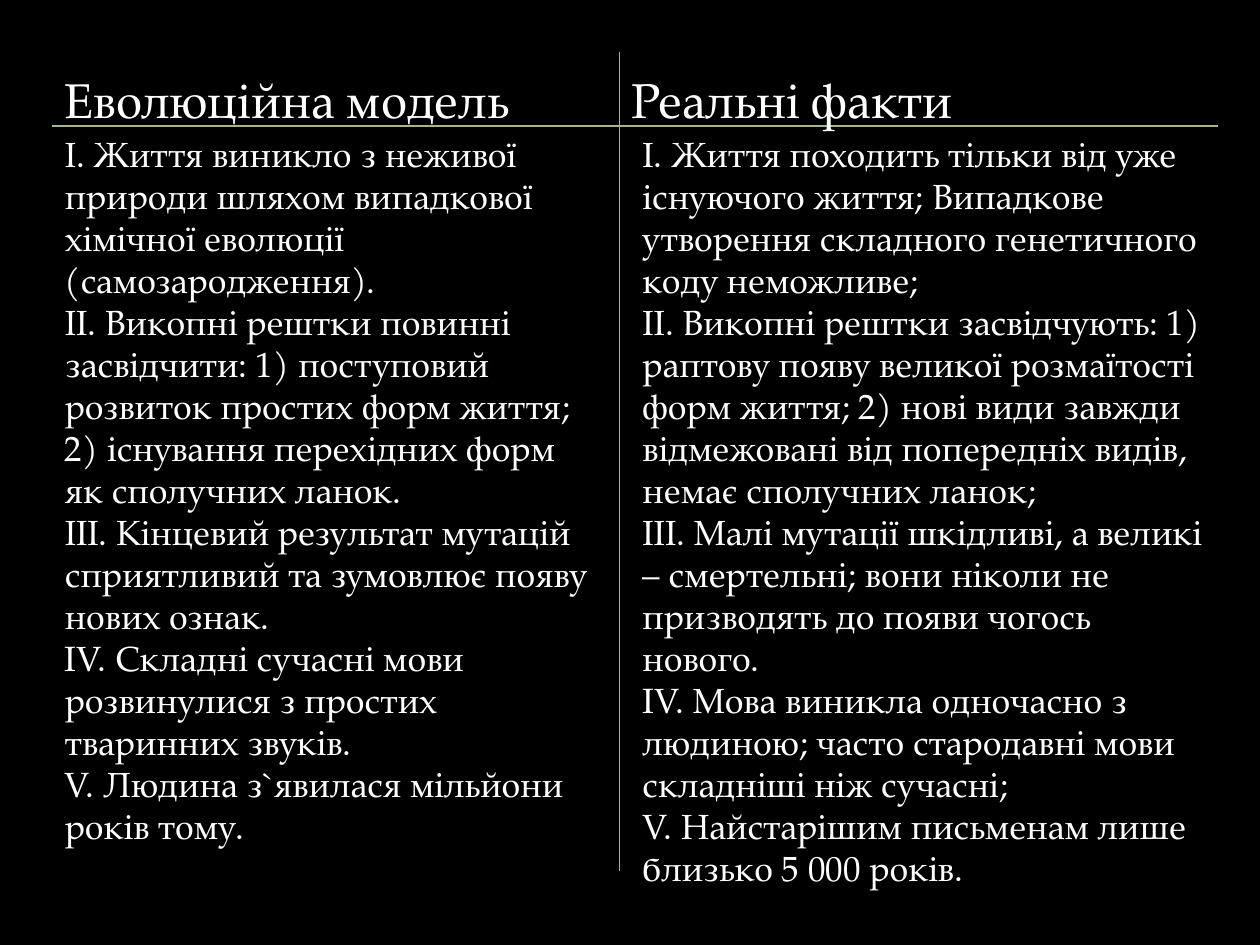
from dataclasses import dataclass

from lxml.etree import SubElement
from pptx import Presentation
from pptx.dml.color import RGBColor
from pptx.enum.shapes import MSO_CONNECTOR
from pptx.enum.text import MSO_AUTO_SIZE
from pptx.oxml.ns import qn
from pptx.util import Pt


@dataclass(frozen=True)
class Theme:
    font: str = "TeX Gyre Pagella"
    background: RGBColor = RGBColor(0x00, 0x00, 0x00)
    text: RGBColor = RGBColor(0xFF, 0xFF, 0xFF)
    rule: RGBColor = RGBColor(0xA5, 0xB5, 0x92)
    heading_size: int = 28
    body_size: int = 20
    rule_width: int = 1


@dataclass(frozen=True)
class Box:
    left: float
    top: float
    width: float
    height: float


THEME = Theme()
HEADING_TOP = 36
HEADING_HEIGHT = 41

EVOLUTION_MODEL = [
    "І. Життя виникло з неживої природи шляхом випадкової хімічної еволюції (самозародження).",
    "ІІ. Викопні рештки повинні засвідчити: 1) поступовий розвиток простих форм життя; "
    "2) існування перехідних форм як сполучних ланок.",
    "ІІІ. Кінцевий результат мутацій сприятливий та зумовлює появу нових ознак.",
    "IV. Складні сучасні мови розвинулися з простих тваринних звуків.",
    "V. Людина з`явилася мільйони років тому.",
]
REAL_FACTS = [
    "І. Життя походить тільки від уже існуючого життя; "
    "Випадкове утворення складного генетичного коду неможливе;",
    "ІІ. Викопні рештки засвідчують: 1) раптову появу великої розмаїтості форм життя; "
    "2) нові види завжди відмежовані від попередніх видів, немає сполучних ланок;",
    "ІІІ. Малі мутації шкідливі, а великі – смертельні; вони ніколи не призводять до появи чогось нового.",
    "IV. Мова виникла одночасно з людиною; часто стародавні мови складніші ніж сучасні;",
    "V. Найстарішим письменам лише близько 5 000 років.",
]


def add_rule(slide, start, end):
    connector = slide.shapes.add_connector(
        MSO_CONNECTOR.STRAIGHT, *(Pt(length) for length in start + end)
    )
    connector.line.color.rgb = THEME.rule
    connector.line.width = Pt(THEME.rule_width)
    SubElement(connector.element.spPr, qn("a:effectLst"))


def add_text(slide, box, lines, size):
    shape = slide.shapes.add_textbox(
        Pt(box.left), Pt(box.top), Pt(box.width), Pt(box.height)
    )
    text_frame = shape.text_frame
    text_frame.word_wrap = True
    text_frame.auto_size = MSO_AUTO_SIZE.SHAPE_TO_FIT_TEXT
    text_frame.text = "\n".join(lines)
    for paragraph in text_frame.paragraphs:
        for run in paragraph.runs:
            run.font.name = THEME.font
            run.font.size = Pt(size)
            run.font.color.rgb = THEME.text


def add_cross(slide, box, center_left, center_top):
    add_rule(slide, (center_left, box.top), (center_left, box.top + box.height))
    add_rule(slide, (box.left, center_top), (box.left + box.width, center_top))


def add_column(slide, box, heading, heading_left, heading_width, points):
    heading_box = Box(heading_left, HEADING_TOP, heading_width, HEADING_HEIGHT)
    add_text(slide, heading_box, [heading], THEME.heading_size)
    add_text(slide, box, points, THEME.body_size)


def main():
    presentation = Presentation()
    presentation.slide_width = Pt(720)
    presentation.slide_height = Pt(540)
    slide = presentation.slides.add_slide(presentation.slide_layouts[6])
    slide.background.fill.solid()
    slide.background.fill.fore_color.rgb = THEME.background

    add_cross(slide, Box(30, 30, 666, 468), center_left=354, center_top=72)
    add_column(
        slide, Box(30, 72, 318, 441), "Еволюційна модель", 30, 312, EVOLUTION_MODEL
    )
    add_column(slide, Box(360, 72, 336, 443), "Реальні факти", 354, 342, REAL_FACTS)
    presentation.save("out.pptx")


if __name__ == "__main__":
    main()
